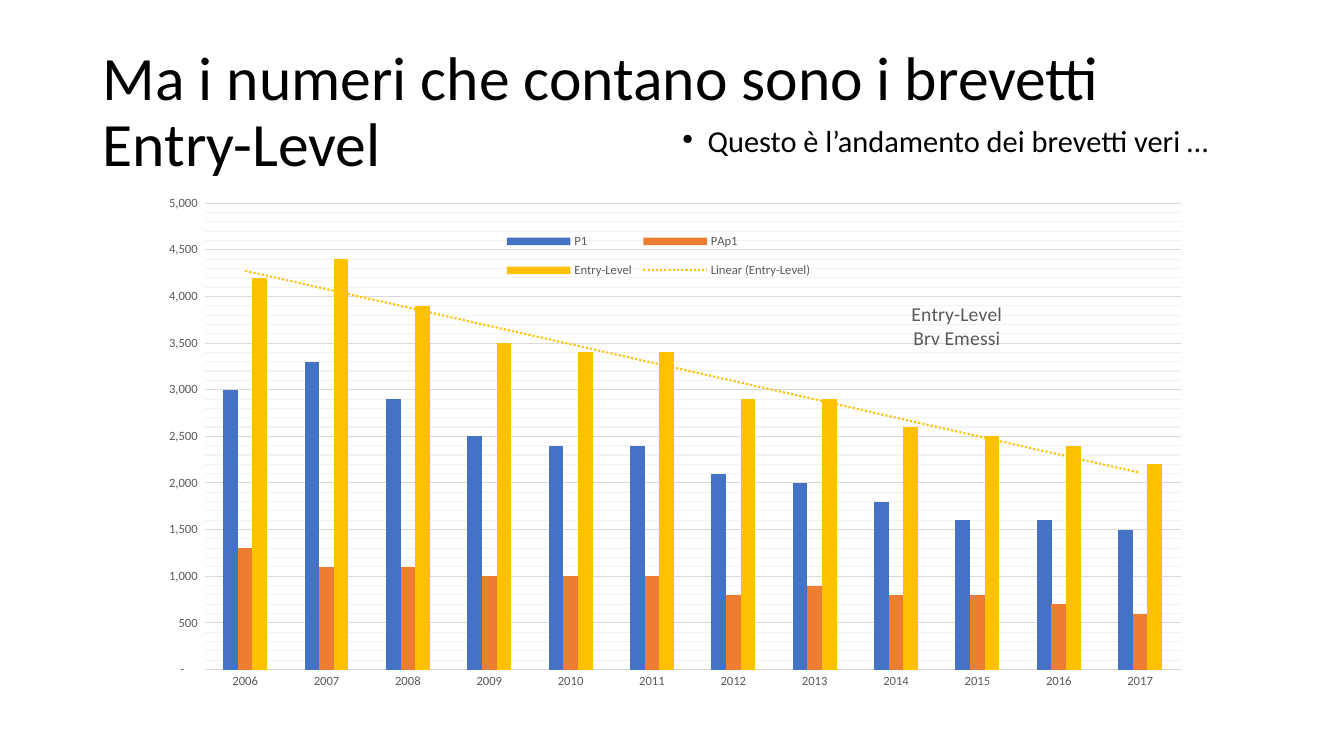
from dataclasses import dataclass
from typing import Any, Optional

from lxml import etree
from pptx import Presentation
from pptx import util as u
from pptx.chart.data import CategoryChartData
from pptx.dml.color import RGBColor
from pptx.enum import chart as ch, text
from pptx.oxml import parse_xml
from pptx.oxml.ns import nsdecls, qn

FONT = "Calibri"
COLORS = {
    "text": "000000", "label": "595959", "grid": "D9D9D9", "minor": "F2F2F2",
    "blue": "4472C4", "orange": "ED7D31", "gold": "FFC000",
}


@dataclass
class Series:
    name: str
    color: str
    values: list[int]


YEARS = [str(year) for year in range(2006, 2018)]
LICENCES = [
    Series("P1", "blue", [3000, 3300, 2900, 2500, 2400, 2400,
                          2100, 2000, 1800, 1600, 1600, 1500]),
    Series("PAp1", "orange", [1300, 1100, 1100, 1000, 1000, 1000,
                              800, 900, 800, 800, 700, 600]),
    Series("Entry-Level", "gold", [4200, 4400, 3900, 3500, 3400, 3400,
                                   2900, 2900, 2600, 2500, 2400, 2200]),
]


def rgb(name: str) -> RGBColor:
    return RGBColor.from_string(COLORS[name])


def style_font(font: Any, size: float, color: str) -> None:
    font.name, font.size, font.bold = FONT, u.Pt(size), False
    font.color.rgb = rgb(color)


def style_line(line: Any, color: str) -> None:
    line.color.rgb = rgb(color)
    line.width = u.Pt(0.75)


def line_xml(color: str, width: float, dash: str = "solid") -> str:
    return (f'<c:spPr {nsdecls("c", "a")}><a:ln w="{u.Pt(width)}"><a:solidFill>'
            f'<a:srgbClr val="{COLORS[color]}"/></a:solidFill>'
            f'<a:prstDash val="{dash}"/></a:ln></c:spPr>')


def add_text(slide: Any, content: str, *, at: tuple[float, float, float, float],
             size: float, spacing: float, anchor: Any, bullet: bool = False) -> None:
    sp = slide.shapes.add_textbox(*(u.Inches(n) for n in at))
    tf = sp.text_frame
    tf.word_wrap, tf.vertical_anchor = True, anchor
    p = tf.paragraphs[0]
    p.line_spacing = spacing
    if bullet:
        pr = p._p.get_or_add_pPr()
        pr.set("marL", str(u.Inches(0.25)))
        pr.set("indent", str(u.Inches(-0.25)))
        etree.SubElement(pr, qn("a:buFont")).set("typeface", "Arial")
        etree.SubElement(pr, qn("a:buChar")).set("char", "•")
    r = p.add_run()
    r.text = content
    style_font(r.font, size, "text")


def set_layout(parent: Any, index: int, x: float, y: float,
               w: Optional[float] = None, h: Optional[float] = None,
               inner: bool = False) -> None:
    """Place a chart part by fractions of the chart area."""
    old = parent.find(qn("c:layout"))
    if old is not None:
        parent.remove(old)
    items = [("layoutTarget", "inner")] if inner else []
    items += [("xMode", "edge"), ("yMode", "edge"), ("x", x), ("y", y)]
    if w is not None:
        items += [("w", w), ("h", h)]
    body = "".join(f'<c:{tag} val="{val}"/>' for tag, val in items)
    parent.insert(index, parse_xml(
        f'<c:layout {nsdecls("c")}><c:manualLayout>{body}</c:manualLayout></c:layout>'))


def add_trend(series: Any, name: str, color: str) -> None:
    series._element.find(qn("c:cat")).addprevious(parse_xml(
        f'<c:trendline {nsdecls("c")}><c:name>{name}</c:name>'
        f'{line_xml(color, 1.5, "sysDot")}'
        '<c:trendlineType val="linear"/><c:dispRSqr val="0"/>'
        '<c:dispEq val="0"/></c:trendline>'))


def add_licence_chart(slide: Any) -> None:
    data = CategoryChartData()
    data.categories = YEARS
    for item in LICENCES:
        data.add_series(item.name, item.values)
    box = [u.Inches(n) for n in (0.79, 1.85, 11.26, 5.51)]
    chart = slide.shapes.add_chart(
        ch.XL_CHART_TYPE.COLUMN_CLUSTERED, *box, data).chart
    style_font(chart.font, 10, "text")

    # Columns and trend line
    plot = chart.plots[0]
    plot.gap_width, plot.overlap, plot.vary_by_categories = 255, 1, False
    for series, item in zip(plot.series, LICENCES):
        series.format.fill.solid()
        series.format.fill.fore_color.rgb = rgb(item.color)
        series.invert_if_negative = False
    add_trend(plot.series[2], "Linear (Entry-Level)", "gold")
    set_layout(chart._chartSpace.chart.plotArea, 0, 0.11, 0.03, 0.86, 0.84, inner=True)

    # Axes
    years, counts = chart.category_axis, chart.value_axis
    for axis in (years, counts):
        axis.major_tick_mark = axis.minor_tick_mark = ch.XL_TICK_MARK.NONE
        style_font(axis.tick_labels.font, 9, "label")
    style_line(years.format.line, "grid")
    counts.format.line.fill.background()
    counts.minimum_scale, counts.maximum_scale = 0, 5000
    counts.major_unit, counts.minor_unit = 500, 100
    counts.has_major_gridlines = counts.has_minor_gridlines = True
    style_line(counts.major_gridlines.format.line, "grid")
    minor = counts._element.find(qn("c:minorGridlines"))
    minor.append(parse_xml(line_xml("minor", 0.75)))
    labels = counts.tick_labels
    labels.number_format = '_-* #,##0_-;\\-* #,##0_-;_-* "-"??_-;_-@_'
    labels.number_format_is_linked = False

    # Chart title
    chart.has_title = True
    title = chart.chart_title
    tf = title.text_frame
    tf.text = "Entry-Level\nBrv Emessi"
    for p in tf.paragraphs:
        style_font(p.font, 14, "label")
        for r in p.runs:
            style_font(r.font, 14, "label")
    set_layout(title._element, 1, 0.73, 0.2)

    # Legend
    chart.has_legend = True
    legend = chart.legend
    legend.position = ch.XL_LEGEND_POSITION.BOTTOM
    legend.include_in_layout = True
    style_font(legend.font, 9, "label")
    set_layout(legend._element, 1, 0.37, 0.06, 0.28, 0.13)


def main() -> None:
    prs = Presentation()
    prs.slide_width, prs.slide_height = u.Inches(13.33), u.Inches(7.5)
    slide = prs.slides.add_slide(prs.slide_layouts[6])
    add_text(slide, "Ma i numeri che contano sono i brevetti Entry-Level",
             at=(0.92, 0.4, 11.5, 1.45), size=44, spacing=0.9,
             anchor=text.MSO_ANCHOR.MIDDLE)
    add_text(slide, "Questo è l’andamento dei brevetti veri …",
             at=(6.67, 1.26, 5.92, 0.59), size=21.7, spacing=0.7,
             anchor=text.MSO_ANCHOR.TOP, bullet=True)
    add_licence_chart(slide)
    prs.save("out.pptx")


if __name__ == "__main__":
    main()
